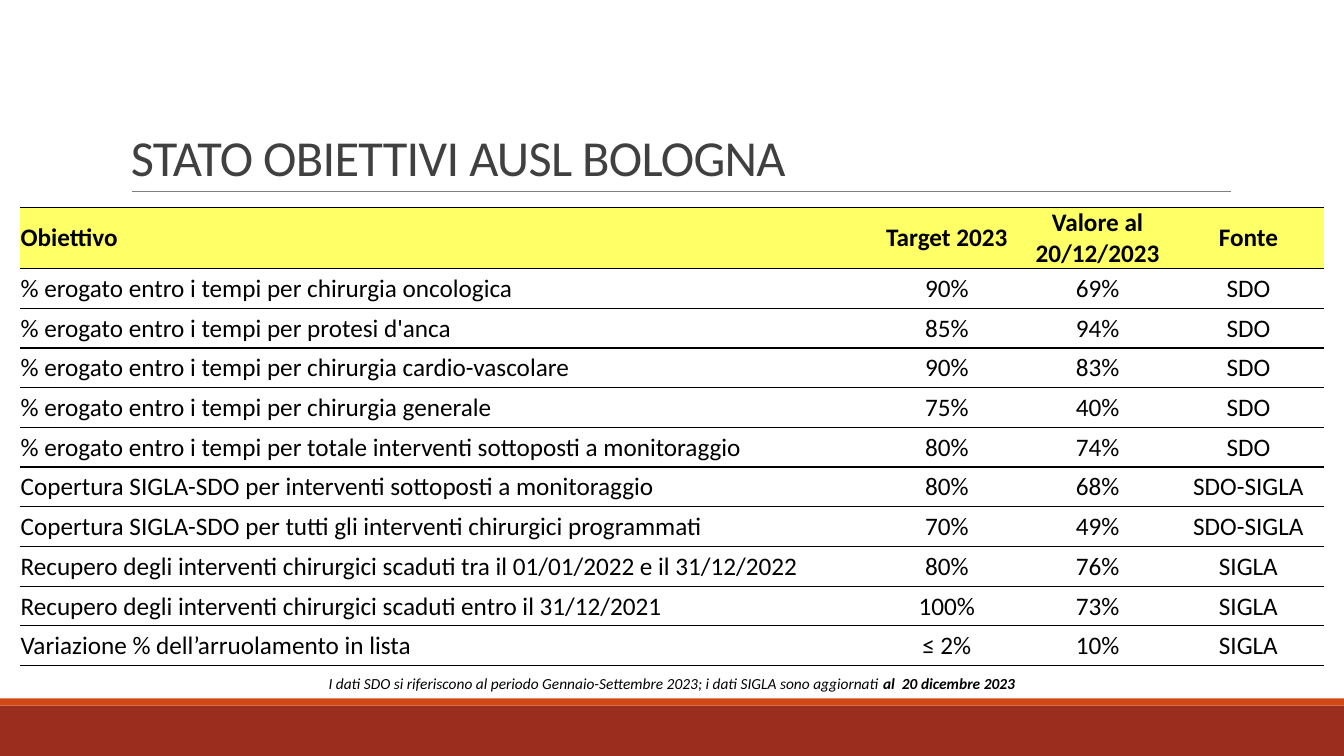
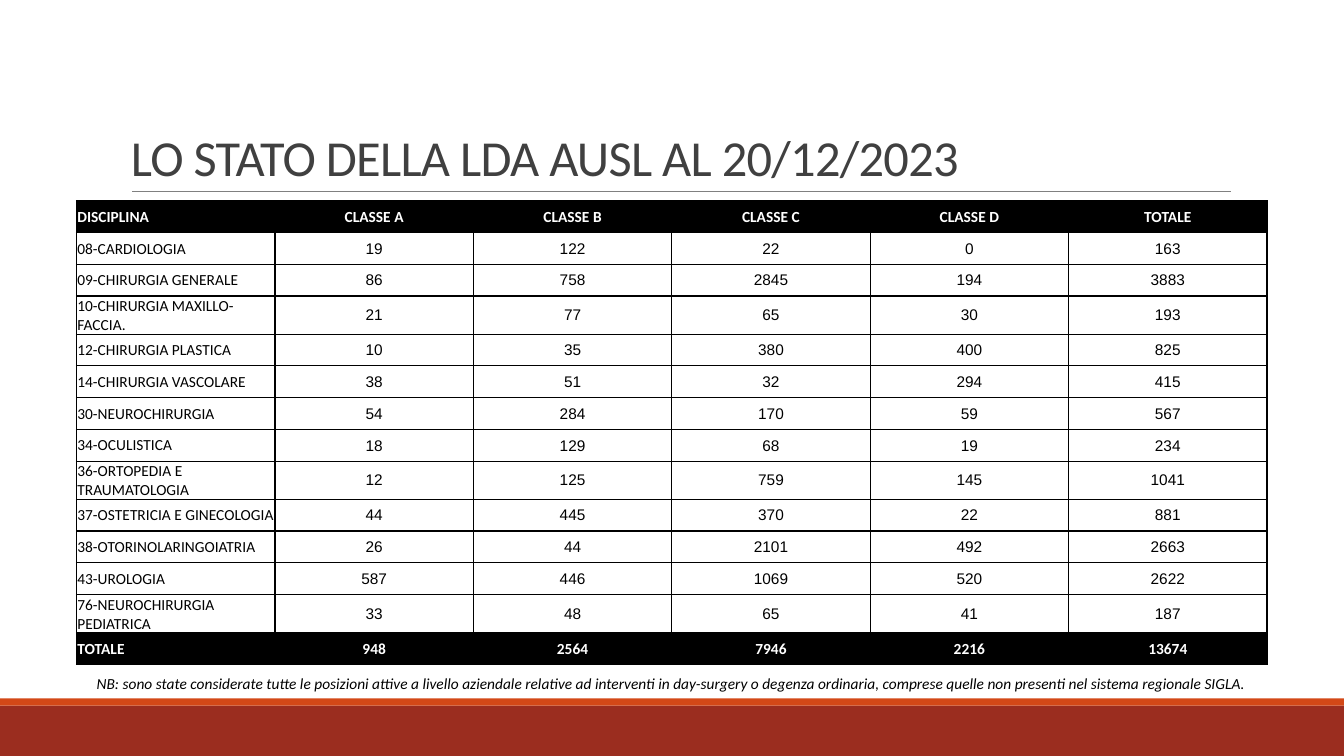
from lxml.etree import SubElement, Element
from pptx import Presentation
from pptx.dml.color import RGBColor
from pptx.enum.shapes import MSO_CONNECTOR, MSO_SHAPE
from pptx.enum.text import MSO_ANCHOR, PP_ALIGN
from pptx.oxml.ns import qn
from pptx.util import Cm, Pt

BLACK = RGBColor(0x00, 0x00, 0x00)
WHITE = RGBColor(0xFF, 0xFF, 0xFF)
YELLOW = RGBColor(0xFF, 0xFF, 0x66)
BRICK = RGBColor(0x9B, 0x2D, 0x1F)
ORANGE = RGBColor(0xD3, 0x48, 0x17)
GREY = RGBColor(0x80, 0x80, 0x80)
DARK_GREY = RGBColor(0x40, 0x40, 0x40)

BODY_FONT, NUMBER_FONT = "Calibri", "Arial"
PAGE_WIDTH, PAGE_HEIGHT = 33.87, 19.05
BAND_TOP, STRIPE_TOP = 17.78, 17.6
CELL_MARGIN = 0.02
ALL_SIDES = ("lnL", "lnR", "lnT", "lnB")

GOALS = [
    ("Obiettivo", "Target 2023", "Valore al 20/12/2023", "Fonte"),
    ("% erogato entro i tempi per chirurgia oncologica", "90%", "69%", "SDO"),
    ("% erogato entro i tempi per protesi d'anca", "85%", "94%", "SDO"),
    ("% erogato entro i tempi per chirurgia cardio-vascolare", "90%", "83%", "SDO"),
    ("% erogato entro i tempi per chirurgia generale", "75%", "40%", "SDO"),
    ("% erogato entro i tempi per totale interventi sottoposti a monitoraggio", "80%", "74%", "SDO"),
    ("Copertura SIGLA-SDO per interventi sottoposti a monitoraggio", "80%", "68%", "SDO-SIGLA"),
    ("Copertura SIGLA-SDO per tutti gli interventi chirurgici programmati", "70%", "49%", "SDO-SIGLA"),
    ("Recupero degli interventi chirurgici scaduti tra il 01/01/2022 e il 31/12/2022", "80%", "76%", "SIGLA"),
    ("Recupero degli interventi chirurgici scaduti entro il 31/12/2021", "100%", "73%", "SIGLA"),
    ("Variazione % dell’arruolamento in lista", "≤ 2%", "10%", "SIGLA"),
]

WAITING_LIST = [
    ("DISCIPLINA", "CLASSE A", "CLASSE B", "CLASSE C", "CLASSE D", "TOTALE"),
    ("08-CARDIOLOGIA", 19, 122, 22, 0, 163),
    ("09-CHIRURGIA GENERALE", 86, 758, 2845, 194, 3883),
    ("10-CHIRURGIA MAXILLO-FACCIA.", 21, 77, 65, 30, 193),
    ("12-CHIRURGIA PLASTICA", 10, 35, 380, 400, 825),
    ("14-CHIRURGIA VASCOLARE", 38, 51, 32, 294, 415),
    ("30-NEUROCHIRURGIA", 54, 284, 170, 59, 567),
    ("34-OCULISTICA", 18, 129, 68, 19, 234),
    ("36-ORTOPEDIA E TRAUMATOLOGIA", 12, 125, 759, 145, 1041),
    ("37-OSTETRICIA E GINECOLOGIA", 44, 445, 370, 22, 881),
    ("38-OTORINOLARINGOIATRIA", 26, 44, 2101, 492, 2663),
    ("43-UROLOGIA", 587, 446, 1069, 520, 2622),
    ("76-NEUROCHIRURGIA PEDIATRICA", 33, 48, 65, 41, 187),
    ("TOTALE", 948, 2564, 7946, 2216, 13674),
]
TWO_LINE_ROWS = (3, 8, 12)


def style_span(span, size, color, font=BODY_FONT, bold=False, italic=False):
    """Format one run of text."""
    span.font.name = font
    span.font.size = Pt(size)
    span.font.color.rgb = color
    span.font.bold = bold
    span.font.italic = italic


def add_band(page, top, height, color):
    """Draw a full-width band without outline."""
    band = page.shapes.add_shape(
        MSO_SHAPE.RECTANGLE, 0, Cm(top), Cm(PAGE_WIDTH), Cm(height))
    band.shadow.inherit = False
    band.fill.solid()
    band.fill.fore_color.rgb = color
    band.line.fill.background()


def add_title(page, left, top, width, height, title):
    """Place the title at the bottom of its box, with a rule beneath."""
    rule = page.shapes.add_connector(
        MSO_CONNECTOR.STRAIGHT, Cm(left + 0.28), Cm(top + height),
        Cm(left + width + 0.02), Cm(top + height))
    rule.line.color.rgb = GREY
    rule.line.width = Pt(0.5)
    SubElement(rule._element.spPr, qn("a:effectLst"))
    box = page.shapes.add_textbox(Cm(left), Cm(top), Cm(width), Cm(height))
    box.text_frame.word_wrap = True
    box.text_frame.vertical_anchor = MSO_ANCHOR.BOTTOM
    box.text_frame.text = title
    para = box.text_frame.paragraphs[0]
    para.line_spacing = 0.85
    style_span(para.runs[0], 36, DARK_GREY)
    para.runs[0]._r.get_or_add_rPr().set("spc", "-50")


def add_footnote(page, top, height, note, emphasis):
    """Write a centred italic note, ending with an optional bold part."""
    box = page.shapes.add_textbox(0, Cm(top), Cm(PAGE_WIDTH), Cm(height))
    box.text_frame.word_wrap = True
    para = box.text_frame.paragraphs[0]
    para.alignment = PP_ALIGN.CENTER
    for text, bold in ((note, False), (emphasis, True)):
        if text:
            span = para.add_run()
            span.text = text
            style_span(span, 11, BLACK, bold=bold, italic=True)


def add_page(deck, title, note, emphasis=""):
    """Add a page with bands, title and footnote."""
    page = deck.slides.add_slide(deck.slide_layouts[6])
    add_band(page, BAND_TOP, PAGE_HEIGHT - BAND_TOP, BRICK)
    add_band(page, STRIPE_TOP, BAND_TOP - STRIPE_TOP, ORANGE)
    add_title(page, 3.05, 0.78, 27.94, 4.04, title)
    add_footnote(page, 16.87, 0.73, note, emphasis)
    return page


def set_borders(cell, ruled_sides):
    """Rule the given sides of a cell in black and clear the others."""
    properties = cell._tc.get_or_add_tcPr()
    for index, side in enumerate(ALL_SIDES):
        line = Element(qn(f"a:{side}"), w=str(Pt(1)))
        if side in ruled_sides:
            fill = SubElement(line, qn("a:solidFill"))
            SubElement(fill, qn("a:srgbClr"), val=str(BLACK))
        else:
            SubElement(line, qn("a:noFill"))
        properties.insert(index, line)


def fill_cell(cell, value, size, color, font, bold, background, centred):
    """Write and format the content of one cell."""
    cell.margin_left = cell.margin_right = cell.margin_top = Cm(CELL_MARGIN)
    cell.margin_bottom = 0
    cell.vertical_anchor = MSO_ANCHOR.MIDDLE
    cell.text_frame.text = str(value)
    para = cell.text_frame.paragraphs[0]
    para.alignment = PP_ALIGN.CENTER if centred else PP_ALIGN.LEFT
    style_span(para.runs[0], size, color, font, bold)
    if background is None:
        cell.fill.background()
    else:
        cell.fill.solid()
        cell.fill.fore_color.rgb = background


def add_grid(page, left, top, widths, heights, rows, size, accent,
             accent_text, accent_rows, ruled_sides, value_font):
    """Build a table whose accent rows are bold on a coloured fill."""
    table = page.shapes.add_table(
        len(rows), len(widths), Cm(left), Cm(top),
        Cm(sum(widths)), Cm(sum(heights))).table
    table.first_row = table.horz_banding = False
    for column, width in zip(table.columns, widths):
        column.width = Cm(width)
    for row, height in zip(table.rows, heights):
        row.height = Cm(height)
    for row_index, values in enumerate(rows):
        accented = row_index in accent_rows
        color = accent_text if accented else BLACK
        background = accent if accented else None
        for column_index, value in enumerate(values):
            centred = column_index > 0
            font = value_font if centred and not accented else BODY_FONT
            cell = table.cell(row_index, column_index)
            fill_cell(cell, value, size, color, font, accented, background, centred)
            set_borders(cell, ruled_sides)


def add_goals_page(deck):
    """Add the page comparing targets with current values."""
    page = add_page(
        deck, "STATO OBIETTIVI AUSL BOLOGNA",
        "I dati SDO si riferiscono al periodo Gennaio-Settembre 2023; "
        "i dati SIGLA sono aggiornati ", "al  20 dicembre 2023")
    heights = [1.55] + [1] * (len(GOALS) - 1)
    add_grid(page, 0.5, 5.22, [21.46, 3.8, 3.8, 3.8], heights, GOALS, 18,
             YELLOW, BLACK, (0,), ("lnT", "lnB"), BODY_FONT)


def add_waiting_list_page(deck):
    """Add the page counting waiting patients by discipline and class."""
    page = add_page(
        deck, "LO STATO DELLA LDA AUSL AL 20/12/2023",
        "NB: sono state considerate tutte le posizioni attive a livello aziendale "
        "relative ad interventi in day-surgery o degenza ordinaria, comprese quelle "
        "non presenti nel sistema regionale SIGLA.")
    last = len(WAITING_LIST) - 1
    heights = [0.96 if index in TWO_LINE_ROWS else 0.8 for index in range(last + 1)]
    add_grid(page, 1.93, 5.06, [5] * 6, heights, WAITING_LIST, 11,
             BLACK, WHITE, (0, last), ALL_SIDES, NUMBER_FONT)


def main():
    """Build and save the deck."""
    deck = Presentation()
    deck.slide_width = Cm(PAGE_WIDTH)
    deck.slide_height = Cm(PAGE_HEIGHT)
    add_goals_page(deck)
    add_waiting_list_page(deck)
    deck.save("out.pptx")


if __name__ == "__main__":
    main()
